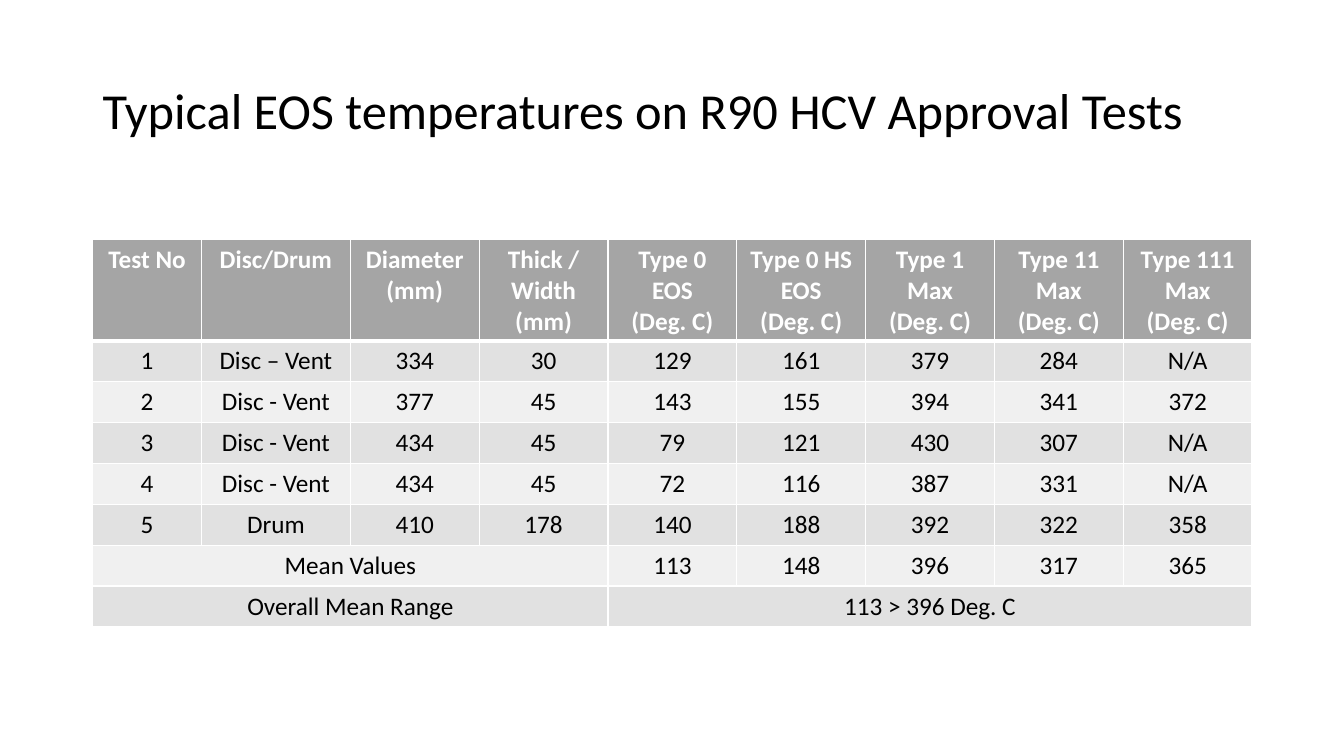
from lxml.etree import SubElement
from pptx import Presentation
from pptx.dml.color import RGBColor
from pptx.enum.text import MSO_ANCHOR, PP_ALIGN
from pptx.oxml.ns import qn
from pptx.util import Inches, Pt

THEME = {
    "font": "Calibri", "title": 36, "body": 18,
    "text": "000000", "white": "FFFFFF",
    "header": "A5A5A5", "bands": ("F0F0F0", "E1E1E1"),
}

# Slide size and grid
prs = Presentation()
prs.slide_width, prs.slide_height = Inches(13.33), Inches(7.5)
s = prs.slides.add_slide(prs.slide_layouts[6])
LEFT, WIDTH = Inches(0.92), Inches(11.5)
COL, ROW, SHIFT = WIDTH // 9, Inches(3.65) // 9, Inches(0.2)


def write(tf, text, align, size, color, bold=False):
    """Fill a text frame, one paragraph per line of text."""
    for i, line in enumerate(text.split("\n")):
        p = tf.paragraphs[0] if i == 0 else tf.add_paragraph()
        p.alignment = align
        r = p.add_run()
        r.text = line
        for name, value in {"name": THEME["font"], "size": Pt(size), "bold": bold}.items():
            setattr(r.font, name, value)
        r.font.color.rgb = RGBColor.from_string(color)


def border(cell, side, width):
    """Draw one white cell edge."""
    ln = SubElement(cell._tc.get_or_add_tcPr(), qn(f"a:ln{side}"), w=str(Pt(width)))
    SubElement(SubElement(ln, qn("a:solidFill")), qn("a:srgbClr"), val=THEME["white"])


# Title
tf = s.shapes.add_textbox(LEFT, Inches(0.4), WIDTH, Inches(1.45)).text_frame
tf.word_wrap = True
tf.vertical_anchor = MSO_ANCHOR.MIDDLE
write(tf, "Typical EOS temperatures on R90 HCV Approval Tests",
      PP_ALIGN.LEFT, THEME["title"], THEME["text"])
tf.paragraphs[0].line_spacing = 0.9

# Table contents; None continues the merged cell on its left
rows = [
    ["Test No", "Disc/Drum", "Diameter (mm)", "Thick / Width (mm)",
     *(f"{test}\n(Deg. C)" for test in (
         "Type 0\nEOS", "Type 0 HS\nEOS", "Type 1\nMax", "Type 11\nMax", "Type 111\nMax"))],
    ["1", "Disc – Vent", "334", "30", "129", "161", "379", "284", "N/A"],
    ["2", "Disc - Vent", "377", "45", "143", "155", "394", "341", "372"],
    ["3", "Disc - Vent", "434", "45", "79", "121", "430", "307", "N/A"],
    ["4", "Disc - Vent", "434", "45", "72", "116", "387", "331", "N/A"],
    ["5", "Drum", "410", "178", "140", "188", "392", "322", "358"],
    ["Mean Values", None, None, None, "113", "148", "396", "317", "365"],
    ["Overall Mean Range", None, None, None, "113 > 396 Deg. C", None, None, None, None],
]

# Table grid: the header is two units high, the first column lends width to the second
frame = s.shapes.add_table(len(rows), len(rows[0]), LEFT, Inches(2.38), WIDTH, Inches(3.84))
table = frame.table
for j, col in enumerate(table.columns):
    col.width = COL + {0: -SHIFT, 1: SHIFT}.get(j, 0)
for i, row in enumerate(table.rows):
    row.height = ROW * (2 if i == 0 else 1)

# Cells
for i, values in enumerate(rows):
    head = i == 0
    for j, text in enumerate(values):
        cell = table.cell(i, j)
        for side in "LRTB":
            border(cell, side, 3 if (i, side) in ((0, "B"), (1, "T")) else 1)
        cell.fill.solid()
        cell.fill.fore_color.rgb = RGBColor.from_string(
            THEME["header"] if head else THEME["bands"][i % 2])
        if text is not None:
            write(cell.text_frame, text, PP_ALIGN.CENTER, THEME["body"],
                  THEME["white" if head else "text"], head)

# Merged summary cells
for i, first, last in ((6, 0, 3), (7, 0, 3), (7, 4, 8)):
    table.cell(i, first).merge(table.cell(i, last))

prs.save("out.pptx")
